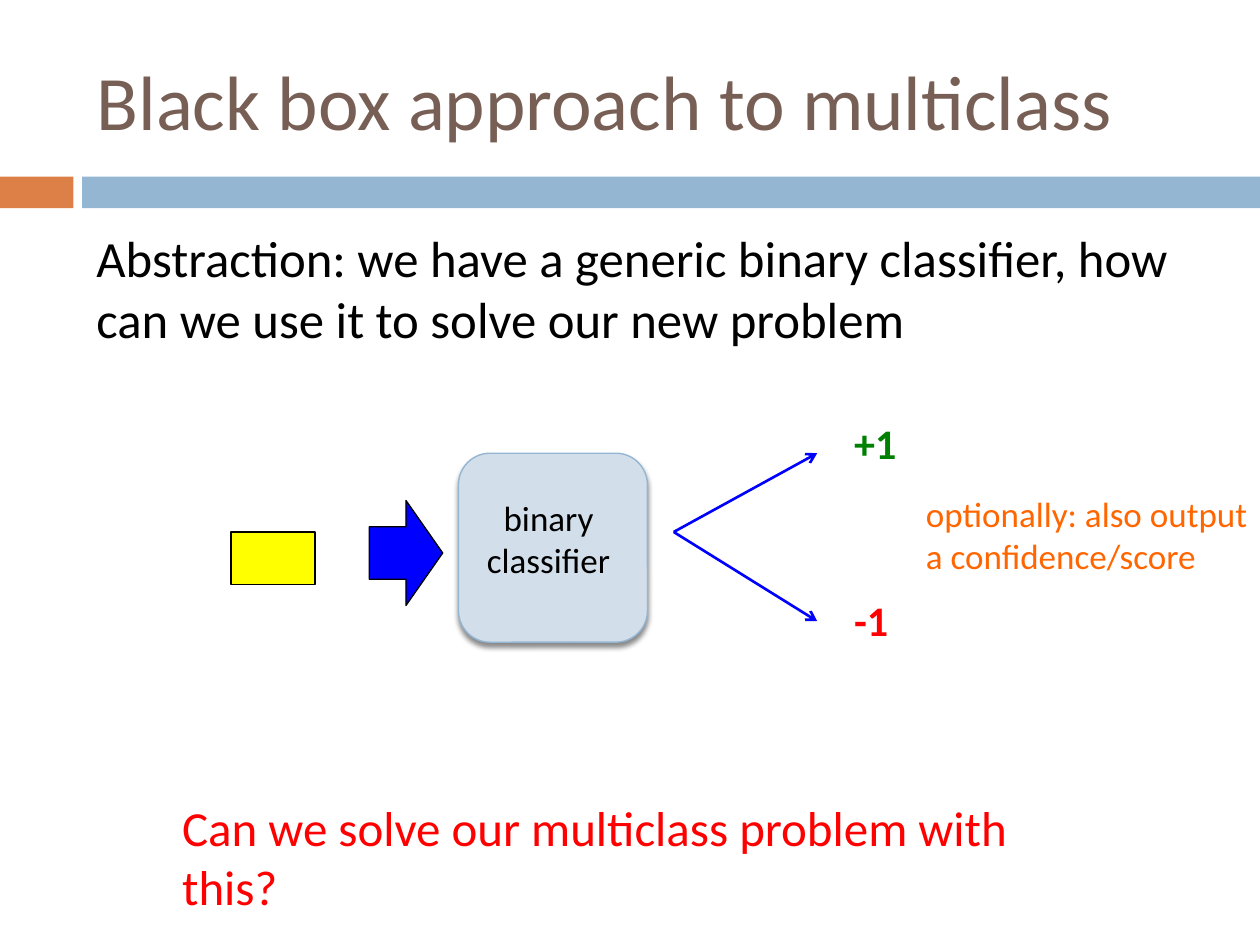
from lxml import etree
from pptx import Presentation
from pptx.dml.color import RGBColor
from pptx.enum import shapes, text
from pptx.oxml import parse_xml
from pptx.oxml.ns import nsdecls, qn
from pptx.util import Pt

FONT = "Calibri"
BLUE, RED, BLACK = "0000FF", "FF0000", "000000"


def colour(value):
    return RGBColor.from_string(value)


def place(shape, left, top, width, height):
    shape.left, shape.top = Pt(left), Pt(top)
    shape.width, shape.height = Pt(width), Pt(height)


def format_paragraph(paragraph, size, hue, bold=False, align=text.PP_ALIGN.LEFT):
    paragraph.alignment = align
    font = paragraph.font
    font.name, font.size, font.bold = FONT, Pt(size), bold
    font.color.rgb = colour(hue)


def add_text(slide, box, wording, size, hue, wrap=True, **style):
    frame = slide.shapes.add_textbox(*map(Pt, box)).text_frame
    frame.word_wrap = wrap
    frame.text = wording
    format_paragraph(frame.paragraphs[0], size, hue, **style)
    return frame


def add_block(slide, kind, box, fill, line=None, width=0.75):
    block = slide.shapes.add_shape(kind, *map(Pt, box))
    block.shadow.inherit = False
    block.fill.solid()
    block.fill.fore_color.rgb = colour(fill)
    if line:
        block.line.color.rgb = colour(line)
        block.line.width = Pt(width)
    else:
        block.line.fill.background()
    return block


def add_drop_shadow(shape):
    effects = shape._element.spPr.find(qn("a:effectLst"))
    effects.append(parse_xml(
        f'<a:outerShdw {nsdecls("a")} blurRad="{Pt(3)}" dist="{Pt(2.4)}" '
        'dir="5400000" rotWithShape="0"><a:srgbClr val="000000">'
        '<a:alpha val="45000"/></a:srgbClr></a:outerShdw>'))


def add_arrow(slide, start, end):
    arrow = slide.shapes.add_connector(
        shapes.MSO_CONNECTOR.STRAIGHT, *map(Pt, start + end))
    arrow.line.color.rgb = colour(BLUE)
    arrow.line.width = Pt(1.5)
    etree.SubElement(arrow.line._get_or_add_ln(), qn("a:tailEnd"), type="arrow")
    etree.SubElement(arrow._element.spPr, qn("a:effectLst"))


def add_header_band(slide, left, top, width, height):
    rectangle = shapes.MSO_SHAPE.RECTANGLE
    accent, gap = 42, 5
    add_block(slide, rectangle, (left, top, accent, height), "DD8047")
    start = accent + gap
    add_block(slide, rectangle, (left + start, top, width - start, height), "94B6D2")


def set_title(slide, left, top, width, height):
    title = slide.shapes.title
    place(title, left, top, width, height)
    frame = title.text_frame
    frame.text = "Black box approach to multiclass"
    frame.vertical_anchor = text.MSO_ANCHOR.MIDDLE
    format_paragraph(frame.paragraphs[0], 44, "775F55")


def add_abstraction(slide, *box):
    frame = add_text(
        slide, box,
        "Abstraction: we have a generic binary classifier, how can we use it "
        "to solve our new problem", 29, BLACK)
    frame.paragraphs[0].space_before = Pt(7)


def add_classifier_diagram(slide, left, top):
    kinds = shapes.MSO_SHAPE
    add_block(slide, kinds.RECTANGLE, (left, top + 69, 48, 30), "FFFF00", BLACK)
    add_block(slide, kinds.RIGHT_ARROW, (left + 79, top + 51, 42, 60), BLUE, BLACK)

    classifier = add_block(slide, kinds.ROUNDED_RECTANGLE,
                           (left + 130, top + 24, 108, 108),
                           "D2DEEA", "94B6D2", 0.79)
    add_drop_shadow(classifier)
    add_text(slide, (left + 125, top + 45, 113, 55), "binary classifier",
             20, BLACK, align=text.PP_ALIGN.CENTER)

    origin = (left + 253, top + 69)
    outcomes = [("+1", "008000", 24, 0), ("-1", RED, 120, 101)]
    for label, hue, arrow_end, label_top in outcomes:
        add_arrow(slide, origin, (left + 335, top + arrow_end))
        add_text(slide, (left + 349, top + label_top, 44, 36), label, 24, hue,
                 wrap=False, bold=True)

    add_text(slide, (left + 390, top + 43, 205, 55),
             "optionally: also output a confidence/score", 20, "FF6600")


def add_question(slide, *box):
    add_text(slide, box, "Can we solve our multiclass problem with this?", 28, RED)


def main():
    presentation = Presentation()
    presentation.slide_width, presentation.slide_height = Pt(720), Pt(540)
    slide = presentation.slides.add_slide(presentation.slide_layouts[5])
    add_header_band(slide, 0, 101, 720, 18)
    set_title(slide, 48, 18, 642, 78)
    add_abstraction(slide, 48, 126, 642, 88.5)
    add_classifier_diagram(slide, 132, 235)
    add_question(slide, 97, 452, 528, 41)
    presentation.save("out.pptx")


if __name__ == "__main__":
    main()
